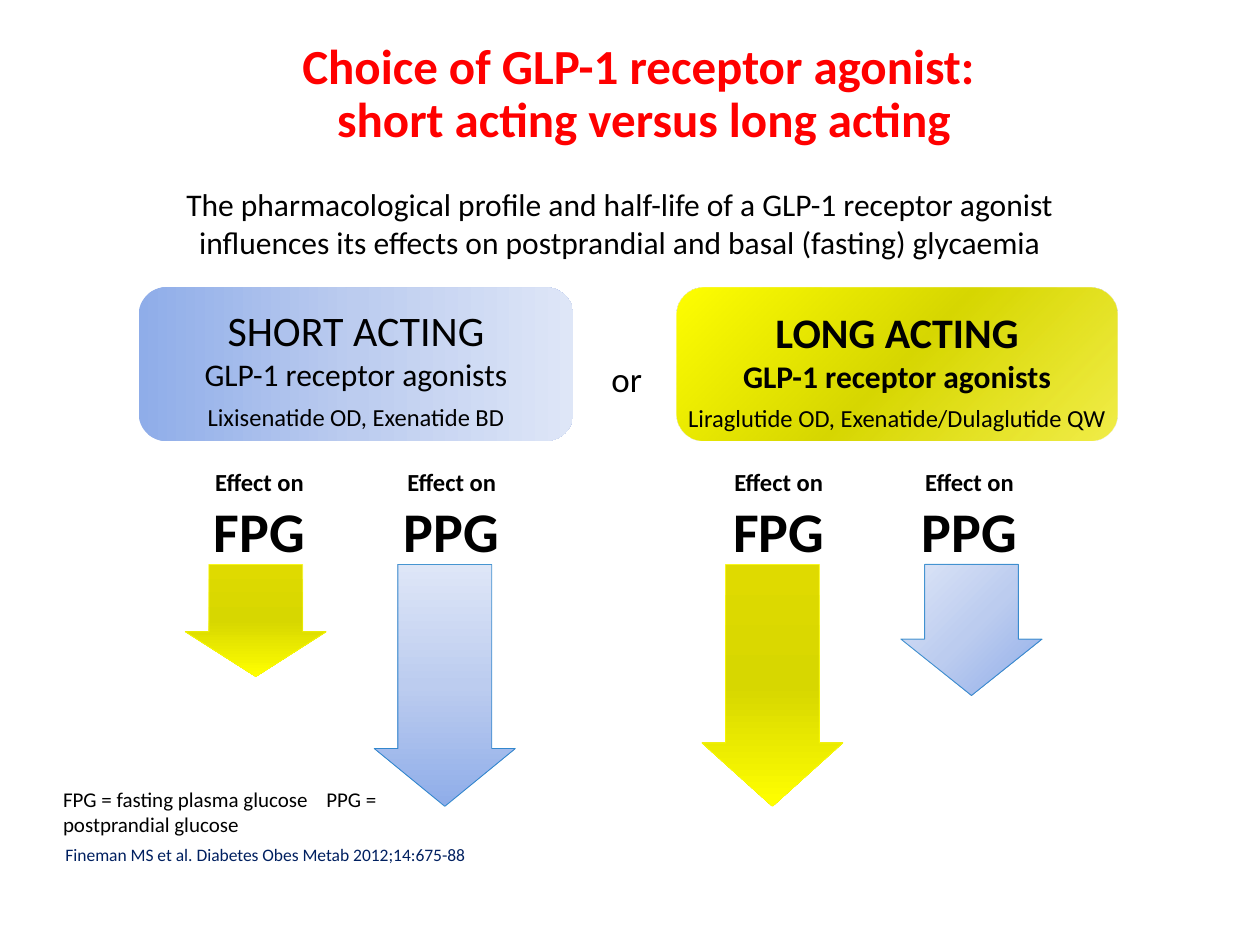
from lxml import etree
from pptx import Presentation
from pptx import util as u
from pptx.dml.color import RGBColor
from pptx.enum import shapes, text
from pptx.oxml import ns

Inches, Pt = u.Inches, u.Pt
FONT = "Calibri"
COLORS = {"title": "FF0000", "text": "000000", "source": "002060",
          "blue_line": "0070C0", "yellow_line": "FFFF00"}
# Gradient stops at 0, 50 and 100 %
GRADIENTS = {"blue": ("8FADE9", "BCCCEF", "DEE6F7"),
             "yellow": ("DFDA00", "D7D700", "FFFF00"),
             "yellow_box": ("EBE600", "D7D700", "FFFF00")}


def sub(parent, tag, **attrs):
    el = etree.SubElement(parent, ns.qn(tag))
    for name, value in attrs.items():
        el.set(name, str(value))
    return el


def set_gradient(sp, name, angle=None):
    """Three-stop gradient: linear at an angle, or radial from a corner."""
    sp.fill.gradient()
    grad = sp._element.spPr.find(ns.qn("a:gradFill"))
    for child in list(grad):
        grad.remove(child)
    stops = sub(grad, "a:gsLst")
    for i, color in enumerate(GRADIENTS[name]):
        stop = sub(stops, "a:gs", pos=i * 50000)
        clr = sub(stop, "a:srgbClr", val=color)
        if name == "yellow_box" and i == 0:
            sub(clr, "a:alpha", val=71000)
    if angle is None:
        radial = sub(grad, "a:path", path="circle")
        sub(radial, "a:fillToRect", l=100000, t=100000)
    else:
        sub(grad, "a:lin", ang=angle * 60000, scaled=1)


def add_run(p, words, size, color="text", bold=False):
    r = p.add_run()
    r.text = words
    r.font.name, r.font.size, r.font.bold = FONT, Pt(size), bold
    r.font.color.rgb = RGBColor.from_string(COLORS[color])


def set_frame(tf, inset=0, anchor=text.MSO_ANCHOR.TOP, wrap=True):
    tf.word_wrap = wrap
    tf.auto_size = text.MSO_AUTO_SIZE.NONE
    tf.vertical_anchor = anchor
    tf.margin_left = tf.margin_right = Inches(inset)
    tf.margin_top = tf.margin_bottom = Inches(inset)


def add_text(s, box, **frame):
    tf = s.shapes.add_textbox(*map(Inches, box)).text_frame
    set_frame(tf, **frame)
    return tf


def add_title(s, box):
    sp = s.shapes.title
    sp.left, sp.top, sp.width, sp.height = map(Inches, box)
    set_frame(sp.text_frame, anchor=text.MSO_ANCHOR.MIDDLE)
    p = sp.text_frame.paragraphs[0]
    p.alignment, p.line_spacing = text.PP_ALIGN.CENTER, Pt(30)
    add_run(p, "Choice of GLP-1 receptor agonist: ", 28, "title", True)
    p.add_line_break()
    add_run(p, "short acting versus long acting", 28, "title", True)


def add_centred(s, box, words, size):
    p = add_text(s, box, inset=0.1).paragraphs[0]
    p.alignment = text.PP_ALIGN.CENTER
    add_run(p, words, size)


def add_class_panel(s, box, text_top, heading, drugs, gradient, angle, bold):
    """Rounded panel naming one class of agonist and its drugs."""
    left, top, width, height = box
    sp = s.shapes.add_shape(shapes.MSO_SHAPE.ROUNDED_RECTANGLE, *map(Inches, box))
    sp.adjustments[0] = 0.18
    sp.shadow.inherit = False
    sp.line.fill.background()
    set_gradient(sp, gradient, angle)

    tf = add_text(s, (left, text_top, width, top + height - text_top))
    p = tf.paragraphs[0]
    add_run(p, heading, 24, bold=bold)
    p.add_line_break()
    add_run(p, "GLP-1 receptor agonists", 18, bold=bold)
    add_run(tf.add_paragraph(), drugs, 14)
    for p in tf.paragraphs:
        p.alignment, p.line_spacing = text.PP_ALIGN.CENTER, Pt(21.6)


def add_effect(s, label_box, arrow_box, measure, color, angle, head):
    """Label with a down arrow whose length shows the effect."""
    p = add_text(s, label_box, wrap=False).paragraphs[0]
    p.alignment = text.PP_ALIGN.CENTER
    add_run(p, "Effect on", 14, bold=True)
    p.add_line_break()
    add_run(p, measure, 32, bold=True)

    # A right arrow turned by 90 degrees about the centre of its box
    left, top, width, length = arrow_box
    shift = (length - width) / 2
    sp = s.shapes.add_shape(shapes.MSO_SHAPE.RIGHT_ARROW, Inches(left - shift),
                            Inches(top + shift), Inches(length), Inches(width))
    sp.rotation = 90
    sp.adjustments[0], sp.adjustments[1] = 0.665, head
    sp.shadow.inherit = False
    set_gradient(sp, color, angle)
    sp.line.width = Pt(0.5)
    sp.line.color.rgb = RGBColor.from_string(COLORS[color + "_line"])
    line_color = next(sp.line._ln.iter(ns.qn("a:srgbClr")))
    sub(line_color, "a:alpha", val=68000)


def add_note(s, box, words, size, color, tab=None):
    p = add_text(s, box, inset=0.06, anchor=text.MSO_ANCHOR.MIDDLE).paragraphs[0]
    p.space_before = Pt(10)
    if tab:
        tabs = sub(p._p.get_or_add_pPr(), "a:tabLst")
        sub(tabs, "a:tab", pos=Inches(tab), algn="l")
    add_run(p, words, size, color)


def main():
    prs = Presentation()
    prs.slide_width, prs.slide_height = Inches(10), Inches(7.5)
    s = prs.slides.add_slide(prs.slide_layouts[5])

    # Heading and introduction
    add_title(s, (0.48, 0.32, 9.26, 0.86))
    add_centred(s, (1.09, 1.37, 7.66, 0.74),
                "The pharmacological profile and half-life of a GLP-1 receptor agonist "
                "influences its effects on postprandial and basal (fasting) glycaemia", 18)

    # Effects: label left and width, arrow left and length, measure, colour, angle, head
    effects = [(1.6, 0.92, 1.47, 0.89, "FPG", "yellow", 0, 0.4),
               (3.11, 0.95, 2.97, 1.92, "PPG", "blue", 180, 0.41),
               (5.72, 0.92, 5.57, 1.92, "FPG", "yellow", 0, 0.45),
               (7.22, 0.95, 7.15, 1.04, "PPG", "blue", None, 0.43)]
    for label_x, label_w, arrow_x, length, *style in effects:
        add_effect(s, (label_x, 3.71, label_w, 0.77),
                   (arrow_x, 4.48, 1.12, length), *style)

    # The two classes
    add_class_panel(s, (1.1, 2.28, 3.45, 1.22), 2.52, "SHORT ACTING",
                    "Lixisenatide OD, Exenatide BD", "blue", 0, False)
    add_class_panel(s, (5.37, 2.28, 3.5, 1.22), 2.53, "LONG ACTING",
                    "Liraglutide OD, Exenatide/Dulaglutide QW", "yellow_box", 225, True)
    add_centred(s, (4.57, 2.74, 0.81, 0.54), "or", 20)

    # Footnotes
    add_note(s, (0.44, 6.24, 2.98, 0.4),
             "FPG = fasting plasma glucose\tPPG = postprandial glucose", 12, "text", 2.09)
    add_note(s, (0.46, 6.58, 4.1, 0.4),
             "Fineman MS et al. Diabetes Obes Metab 2012;14:675-88", 10, "source")

    prs.save("out.pptx")


if __name__ == "__main__":
    main()
